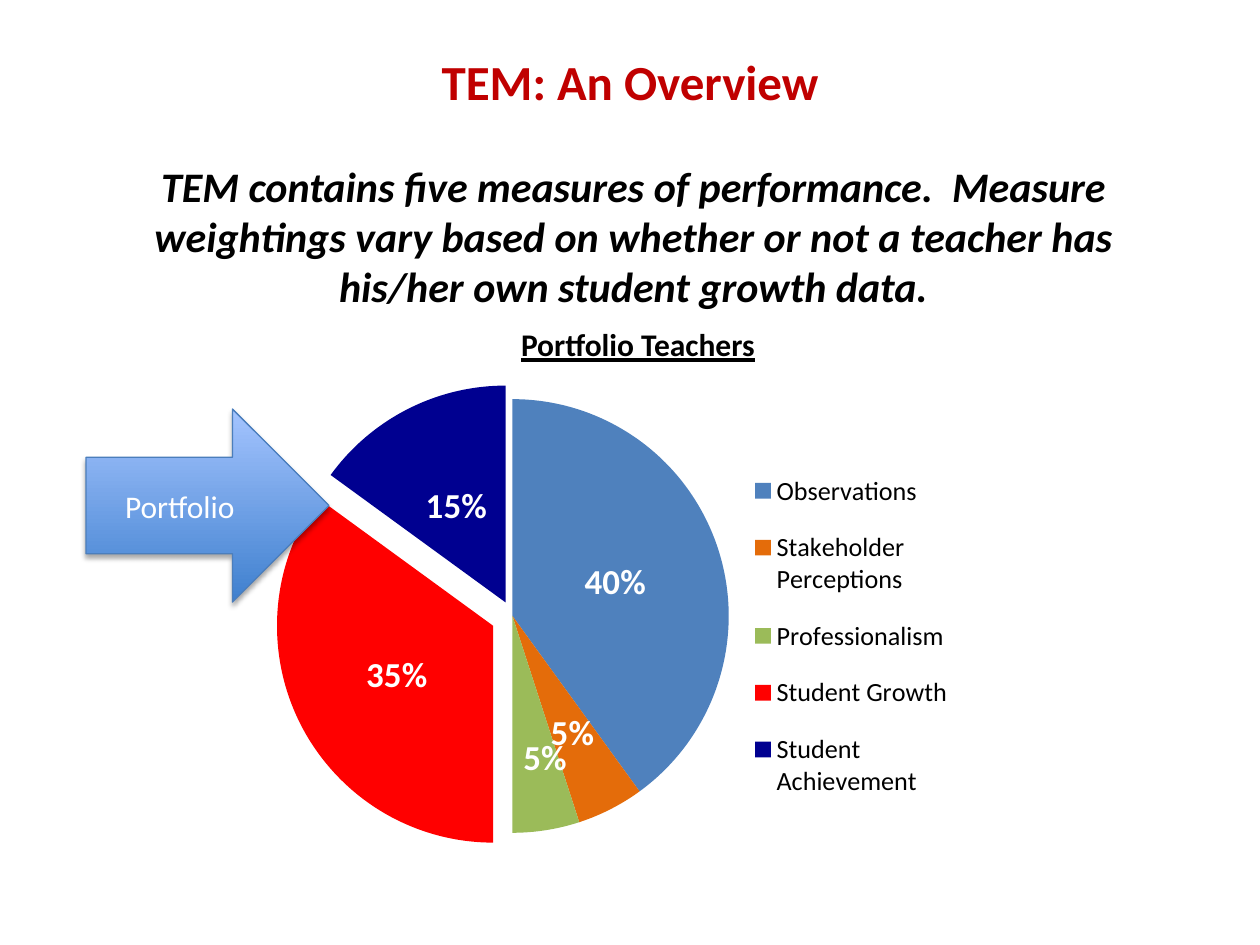
from lxml.etree import SubElement
from pptx import Presentation
from pptx.chart.data import CategoryChartData
from pptx.dml.color import RGBColor
from pptx.enum.chart import XL_CHART_TYPE, XL_LABEL_POSITION, XL_LEGEND_POSITION
from pptx.enum.shapes import MSO_SHAPE
from pptx.enum.text import MSO_ANCHOR, PP_ALIGN
from pptx.oxml import parse_xml
from pptx.oxml.ns import nsdecls, qn
from pptx.util import Pt

PX = 914400 // 126
COLORS = {
    "title": "C00000", "text": "000000", "light": "FFFFFF",
    "arrow_bottom": "3F80CE", "arrow_top": "A4C4FF", "arrow_line": "4B7EBC",
}
# category, share, slice colour, explosion in percent
MEASURES = [
    ("Observations", 0.40, "4F81BD", 0),
    ("Stakeholder Perceptions", 0.05, "E46C0A", 0),
    ("Professionalism", 0.05, "9BBB59", 0),
    ("Student Growth", 0.35, "FF0000", 10),
    ("Student Achievement", 0.15, "000090", 7),
]
LABEL_SHIFTS = {1: (11, 20), 2: (16, 35)}


def color(name):
    return RGBColor.from_string(COLORS.get(name, name))


def scaled(box):
    return [length * PX for length in box]


def style_font(font, size, name, bold=False):
    font.name, font.size, font.bold = "Calibri", Pt(size), bold
    font.color.rgb = color(name)


def write_text(shape, text, size, name, bold=False, anchor=MSO_ANCHOR.TOP):
    frame = shape.text_frame
    frame.word_wrap = True
    frame.vertical_anchor = anchor
    frame.text = text
    para = frame.paragraphs[0]
    para.alignment = PP_ALIGN.CENTER
    span = para.runs[0]
    style_font(span.font, size, name, bold)
    return span


def add_heading(page, box, text, size, name="text", anchor=MSO_ANCHOR.TOP):
    shape = page.shapes.add_textbox(*scaled(box))
    return write_text(shape, text, size, name, True, anchor)


def layout_xml(values, mode=""):
    parts = "".join(f'<c:{key} val="{value}"/>' for key, value in values.items())
    return parse_xml(f'<c:layout {nsdecls("c")}><c:manualLayout>{mode}{parts}'
                     '</c:manualLayout></c:layout>')


def inner_layout(box, chart_box, target=""):
    """Layout of a box in px, relative to the chart box."""
    left, top, width, height = box
    full_width, full_height = chart_box[2:]
    mode = target + '<c:xMode val="edge"/><c:yMode val="edge"/>'
    return layout_xml({"x": round(left / full_width, 3),
                       "y": round(top / full_height, 3),
                       "w": round(width / full_width, 3),
                       "h": round(height / full_height, 3)}, mode)


def add_pie(page, box):
    data = CategoryChartData(number_format="0%")
    data.categories = [measure[0] for measure in MEASURES]
    data.add_series("Series 1", [measure[1] for measure in MEASURES])
    chart = page.shapes.add_chart(XL_CHART_TYPE.PIE, *scaled(box), data).chart
    chart.has_title = False
    style_font(chart.font, 10, "text")

    # Slices
    plot = chart.plots[0]
    plot.vary_by_categories = True
    series = plot.series[0]
    for index, (_, _, fill, explosion) in enumerate(MEASURES):
        point = series.points[index]
        point.format.fill.solid()
        point.format.fill.fore_color.rgb = color(fill)
        if explosion:
            slice_xml = series._element.findall(qn("c:dPt"))[index]
            offset = slice_xml.makeelement(qn("c:explosion"), {"val": str(explosion)})
            slice_xml.find(qn("c:spPr")).addprevious(offset)

    # Value labels, the two narrow slices moved outwards
    labels = series.data_labels
    labels.show_value = True
    labels.show_percentage = False
    labels.number_format = "0%"
    labels.number_format_is_linked = False
    labels.position = XL_LABEL_POSITION.CENTER
    style_font(labels.font, 20, "light", True)
    for index, (across, down) in LABEL_SHIFTS.items():
        label = series.points[index].data_label
        style_font(label.font, 20, "light", True)
        label.position = XL_LABEL_POSITION.CENTER
        shift = layout_xml({"x": round(across / box[2], 3),
                            "y": round(down / box[3], 3)})
        label_xml = labels._element.findall(qn("c:dLbl"))[len(
            [key for key in LABEL_SHIFTS if key < index])]
        label_xml.find(qn("c:idx")).addnext(shift)

    # Legend
    chart.has_legend = True
    legend = chart.legend
    legend.position = XL_LEGEND_POSITION.RIGHT
    legend.include_in_layout = False
    style_font(legend.font, 15, "text")
    position = legend._element.find(qn("c:legendPos"))
    position.addnext(inner_layout((471, 72, 205, 372), box))

    # Plot area
    area = chart._chartSpace.chart.plotArea
    for old in area.findall(qn("c:layout")):
        area.remove(old)
    area.insert(0, inner_layout((17, 21, 434, 434), box,
                                '<c:layoutTarget val="inner"/>'))


def add_arrow(page, box):
    arrow = page.shapes.add_shape(MSO_SHAPE.RIGHT_ARROW, *scaled(box))
    arrow.fill.gradient()
    arrow.fill.gradient_angle = 90
    for stop, name in zip(arrow.fill.gradient_stops, ("arrow_bottom", "arrow_top")):
        stop.color.rgb = color(name)
    arrow.line.color.rgb = color("arrow_line")
    arrow.line.width = Pt(0.75)

    # Soft shadow below
    arrow.shadow.inherit = False
    effects = arrow._element.spPr.find(qn("a:effectLst"))
    shadow = SubElement(effects, qn("a:outerShdw"), blurRad=str(Pt(3.1)),
                        dist=str(Pt(1.8)), dir="5400000", rotWithShape="0")
    tint = SubElement(shadow, qn("a:srgbClr"), val=COLORS["text"])
    SubElement(tint, qn("a:alpha"), val="35000")
    write_text(arrow, "Portfolio ", 18, "light", anchor=MSO_ANCHOR.MIDDLE)


def main():
    deck = Presentation()
    deck.slide_width, deck.slide_height = scaled((1260, 945))
    page = deck.slides.add_slide(deck.slide_layouts[6])

    add_heading(page, (63, 40, 1134, 82), "TEM: An Overview", 28, "title",
                MSO_ANCHOR.MIDDLE)
    summary = add_heading(
        page, (86, 154, 1095, 165),
        "TEM contains five measures of performance.  Measure weightings vary "
        "based on whether or not a teacher has his/her own student growth data.", 24)
    summary.font.italic = True
    add_pie(page, (277, 378, 689, 517))
    caption = add_heading(page, (406, 319, 464, 50), "Portfolio Teachers", 18)
    caption.font.underline = True
    add_arrow(page, (86, 409, 243, 193))
    deck.save("out.pptx")


if __name__ == "__main__":
    main()
